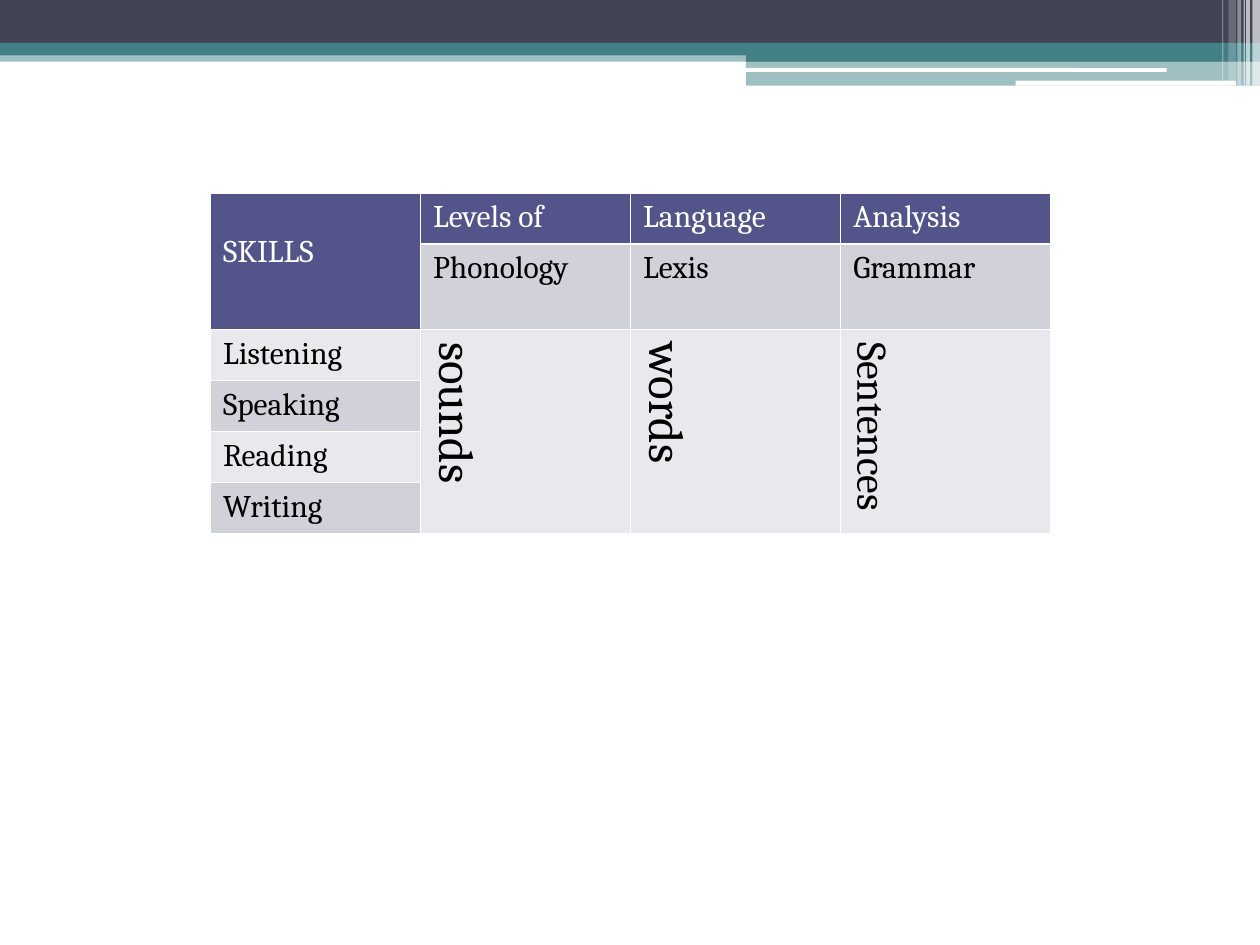
from lxml import etree
from pptx import Presentation
from pptx.dml.color import RGBColor
from pptx.enum.shapes import MSO_SHAPE as Shape
from pptx.oxml.ns import qn
from pptx.util import Inches, Pt

FONT = "Cambria"
SLATE, TEAL, WHITE, BLACK = "424456", "438086", "FFFFFF", "000000"
HEADER, DARK_BAND, LIGHT_BAND = "53548A", "D1D1DA", "E9E9ED"

# left, top, width, height, colour, opacity in percent
BANNER_BARS = [
    (0, 0.4, 10, 0.09, TEAL, 50),
    (0, 0, 10, 0.34, SLATE, 100),
    (0, 0.34, 10, 0.1, TEAL, 100),
    (5.92, 0.39, 4.08, 0.1, TEAL, 100),
    (5.92, 0.48, 4.08, 0.2, TEAL, 50),
]
BANNER_GAPS = [(5.91, 0.54, 3.35, 0.03), (8.06, 0.64, 1.75, 0.04)]
# left, width, height, opacity in percent
EDGE_STRIPES = [
    (9.94, 0.06, 0.68, 65),
    (9.89, 0.03, 0.68, 65),
    (9.87, 0.01, 0.68, 60),
    (9.82, 0.03, 0.68, 40),
    (9.75, 0.06, 0.64, 20),
    (9.7, 0.01, 0.64, 30),
]

LEVELS = [
    ("Levels of", "Phonology", "sounds", 28),
    ("Language", "Lexis", "words", 28),
    ("Analysis", "Grammar", "Sentences", 24),
]
SKILLS = ["Listening", "Speaking", "Reading", "Writing"]
HEADER_ROWS = 2


def rgb(colour):
    return RGBColor.from_string(colour)


def add_bar(slide, left, top, width, height, colour, opacity=100, kind=Shape.RECTANGLE):
    bar = slide.shapes.add_shape(
        kind, Inches(left), Inches(top), Inches(width), Inches(height))
    bar.shadow.inherit = False
    bar.line.fill.background()
    bar.fill.solid()
    bar.fill.fore_color.rgb = rgb(colour)
    if opacity < 100:
        colour_element = bar.fill._xPr.find(qn("a:solidFill"))[0]
        etree.SubElement(colour_element, qn("a:alpha"), val=str(opacity * 1000))


def add_banner(slide, left, top):
    for x, y, width, height, colour, opacity in BANNER_BARS:
        add_bar(slide, left + x, top + y, width, height, colour, opacity)
    for x, y, width, height in BANNER_GAPS:
        add_bar(slide, left + x, top + y, width, height, WHITE,
                kind=Shape.ROUNDED_RECTANGLE)
    for x, width, height, opacity in EDGE_STRIPES:
        add_bar(slide, left + x, top, width, height, WHITE, opacity)


def set_borders(cell):
    properties = cell._tc.get_or_add_tcPr()
    for index, side in enumerate(("lnL", "lnR", "lnT", "lnB")):
        line = etree.Element(qn(f"a:{side}"), w=str(Pt(1)))
        fill = etree.SubElement(line, qn("a:solidFill"))
        etree.SubElement(fill, qn("a:srgbClr"), val=WHITE)
        properties.insert(index, line)


def write_cell(cell, text, fill, colour=BLACK, size=18):
    cell.text = text
    cell.fill.solid()
    cell.fill.fore_color.rgb = rgb(fill)
    font = cell.text_frame.paragraphs[0].font
    font.name, font.size, font.color.rgb = FONT, Pt(size), rgb(colour)


def add_skills_table(slide, left, top, width, row_height, second_row_height):
    row_count, column_count = HEADER_ROWS + len(SKILLS), 1 + len(LEVELS)
    height = row_height * (row_count - 1) + second_row_height
    table = slide.shapes.add_table(
        row_count, column_count,
        Inches(left), Inches(top), Inches(width), Inches(height)).table
    for column in table.columns:
        column.width = Inches(width / column_count)
    for row in table.rows:
        row.height = Inches(row_height)
    table.rows[1].height = Inches(second_row_height)
    for cell in table.iter_cells():
        set_borders(cell)

    corner = table.cell(0, 0)
    corner.merge(table.cell(HEADER_ROWS - 1, 0))
    write_cell(corner, "SKILLS", HEADER, WHITE)
    corner.margin_top = Inches(0.33)

    for row, skill in enumerate(SKILLS, HEADER_ROWS):
        write_cell(table.cell(row, 0), skill, DARK_BAND if row % 2 else LIGHT_BAND)

    for column, (heading, level, unit, unit_size) in enumerate(LEVELS, 1):
        write_cell(table.cell(0, column), heading, HEADER, WHITE)
        write_cell(table.cell(1, column), level, DARK_BAND)
        unit_cell = table.cell(HEADER_ROWS, column)
        unit_cell.merge(table.cell(row_count - 1, column))
        write_cell(unit_cell, unit, LIGHT_BAND, size=unit_size)
        unit_cell._tc.get_or_add_tcPr().set("vert", "vert")


def main():
    presentation = Presentation()
    presentation.slide_width, presentation.slide_height = Inches(10), Inches(7.5)
    slide = presentation.slides.add_slide(presentation.slide_layouts[6])
    add_banner(slide, 0, 0)
    add_skills_table(slide, 1.67, 1.53, 6.67, 0.405, 0.68)
    presentation.save("out.pptx")


if __name__ == "__main__":
    main()
